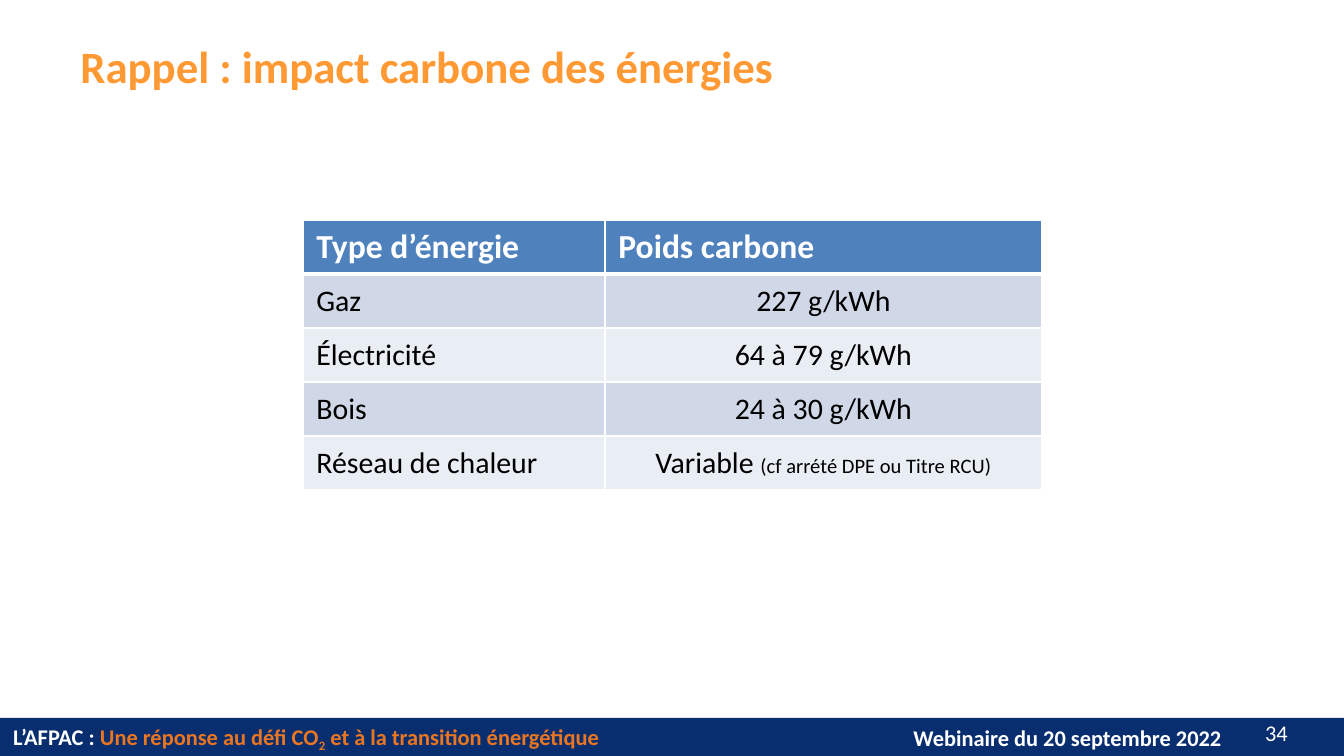
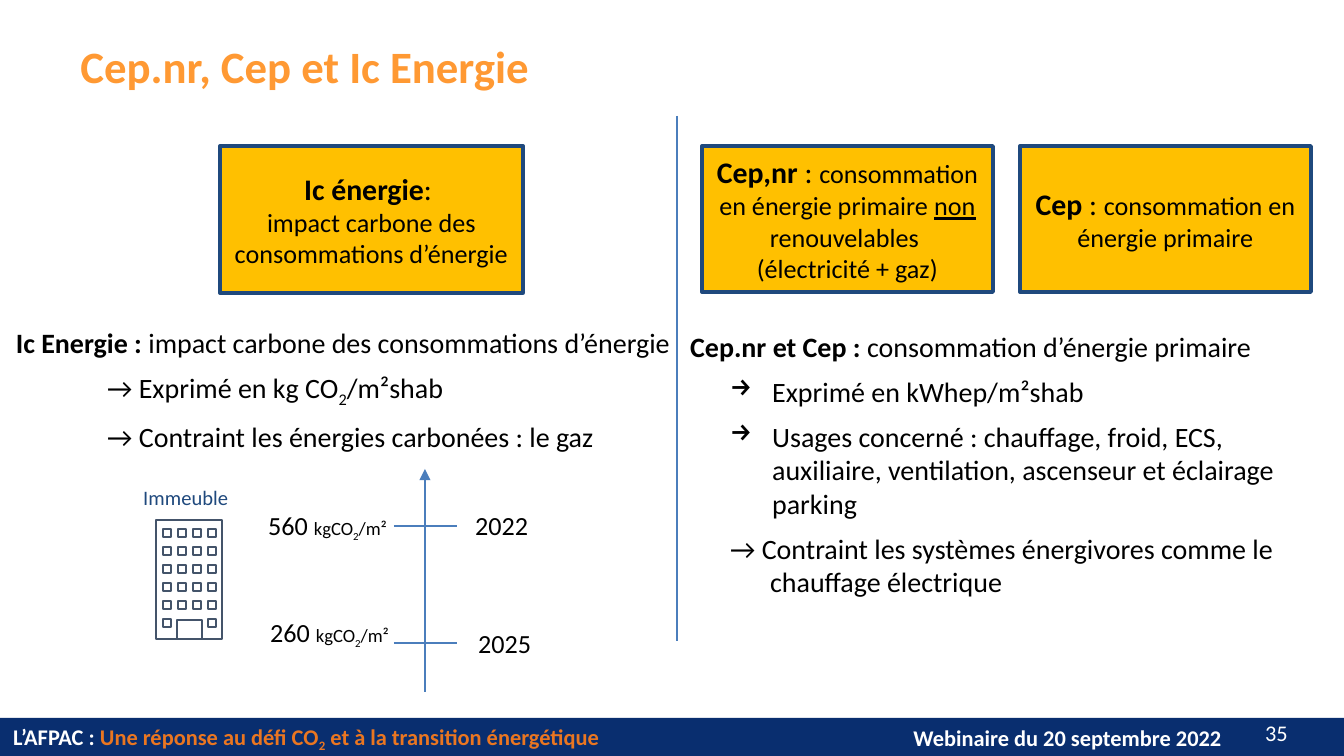
from lxml import etree
from pptx import Presentation
from pptx import util as u
from pptx.dml.color import RGBColor
from pptx.enum import shapes, text
from pptx.oxml import ns

PX = 914400 / 134.4
SLIDE_W, SLIDE_H = 1344, 756
FONT = "Calibri"

WHITE = RGBColor(0xFF, 0xFF, 0xFF)
BLACK = RGBColor(0x00, 0x00, 0x00)
NAVY = RGBColor(0x09, 0x2E, 0x6F)
TITLE_ORANGE = RGBColor(0xFF, 0x99, 0x33)
SLOGAN_ORANGE = RGBColor(0xEA, 0x76, 0x21)
HEADER_BLUE = RGBColor(0x4F, 0x81, 0xBD)
ROW_TINTS = RGBColor(0xD0, 0xD8, 0xE8), RGBColor(0xE9, 0xED, 0xF4)
AMBER = RGBColor(0xFF, 0xC0, 0x00)
DARK_BLUE = RGBColor(0x1F, 0x49, 0x7D)
LINE_BLUE = RGBColor(0x4B, 0x7E, 0xBC)
SLATE = RGBColor(0x44, 0x54, 0x6A)

LEFT, CENTER = text.PP_ALIGN.LEFT, text.PP_ALIGN.CENTER
RIGHT, JUSTIFY = text.PP_ALIGN.RIGHT, text.PP_ALIGN.JUSTIFY
TOP, MIDDLE = text.MSO_ANCHOR.TOP, text.MSO_ANCHOR.MIDDLE

BOLD = {"bold": True}
SUB = {"sub": True}


def px(*lengths):
    return [u.Emu(round(length * PX)) for length in lengths]


def add_runs(paragraph, runs, size, color=BLACK, bold=False):
    """Each run is a (wording, overrides) pair."""
    for wording, style in runs:
        run = paragraph.add_run()
        run.text = wording
        font = run.font
        font.name = FONT
        font.size = u.Pt(style.get("size", size))
        font.bold = style.get("bold", bold)
        font.color.rgb = style.get("color", color)
        if style.get("underline"):
            font.underline = True
        if style.get("sub"):
            run._r.get_or_add_rPr().set("baseline", "-25000")


def fill_frame(frame, paragraphs, size, color=BLACK, bold=False,
               align=LEFT, anchor=TOP):
    frame.word_wrap = True
    frame.vertical_anchor = anchor
    for i, runs in enumerate(paragraphs):
        paragraph = frame.add_paragraph() if i else frame.paragraphs[0]
        paragraph.alignment = align
        add_runs(paragraph, runs, size, color, bold)
    return frame


def add_text(slide, box, paragraphs, size, **style):
    frame = slide.shapes.add_textbox(*px(*box)).text_frame
    return fill_frame(frame, paragraphs, size, **style)


def add_rect(parent, box, fill, line=None, width=1):
    rect = parent.shapes.add_shape(shapes.MSO_SHAPE.RECTANGLE, *px(*box))
    rect.shadow.inherit = False
    rect.fill.solid()
    rect.fill.fore_color.rgb = fill
    if line is None:
        rect.line.fill.background()
    else:
        rect.line.color.rgb = line
        rect.line.width = u.Pt(width)
    return rect


def add_line(slide, x1, y1, x2, y2, arrow=False):
    line = slide.shapes.add_connector(
        shapes.MSO_CONNECTOR.STRAIGHT, *px(x1, y1, x2, y2))
    line.line.color.rgb = LINE_BLUE
    line.line.width = u.Pt(0.75)
    if arrow:
        etree.SubElement(line.line._get_or_add_ln(), ns.qn("a:tailEnd"),
                         type="triangle")
    etree.SubElement(line.element.spPr, ns.qn("a:effectLst"))


def indent(paragraph, left, hanging=0, bullet=None):
    props = paragraph._p.get_or_add_pPr()
    margin, offset = px(left, -hanging)
    props.set("marL", str(margin))
    props.set("indent", str(offset))
    paragraph.space_before = u.Pt(6)
    if bullet:
        etree.SubElement(props, ns.qn("a:buChar"), char=bullet)


def add_footer(slide, box, page):
    x, y, w, h = box
    add_rect(slide, box, NAVY)
    add_text(slide, (x, y, 700, 40), [[
        ("L’AFPAC :", {"color": WHITE}),
        (" Une réponse au défi CO", {}),
        ("2", SUB),
        (" et à la transition énergétique", {}),
    ]], 12, color=SLOGAN_ORANGE, bold=True, anchor=MIDDLE)
    add_text(slide, (x + w - 569, y, 460, 40),
             [[("Webinaire du 20 septembre 2022", {})]],
             12, color=WHITE, bold=True, align=RIGHT)
    add_text(slide, (x + w - 356, y - 5, 313, 40), [[(str(page), {})]],
             12, color=WHITE, align=RIGHT, anchor=MIDDLE)


def add_titled_slide(prs, heading, page):
    slide = prs.slides.add_slide(prs.slide_layouts[5])
    title = slide.shapes.title
    title.left, title.top, title.width, title.height = px(67, 1, 1210, 126)
    frame = fill_frame(title.text_frame, [[(heading, {})]], 24,
                       color=TITLE_ORANGE, bold=True, anchor=MIDDLE)
    frame.auto_size = text.MSO_AUTO_SIZE.NONE
    frame.paragraphs[0].line_spacing = 1.07
    frame.paragraphs[0].space_after = u.Pt(8)
    add_footer(slide, (0, 718, SLIDE_W, 38), page)
    return slide


def set_borders(cell, bottom):
    props = cell._tc.get_or_add_tcPr()
    widths = {"lnL": 1, "lnR": 1, "lnT": 1, "lnB": bottom}
    for i, (side, width) in enumerate(widths.items()):
        border = etree.Element(ns.qn(f"a:{side}"), w=str(u.Pt(width)))
        solid = etree.SubElement(border, ns.qn("a:solidFill"))
        etree.SubElement(solid, ns.qn("a:srgbClr"), val=str(WHITE))
        props.insert(i, border)


def add_carbon_table(slide, box):
    header = "Type d’énergie", "Poids carbone"
    energies = [
        ("Gaz", "227 g/kWh"),
        ("Électricité", "64 à 79 g/kWh"),
        ("Bois", "24 à 30 g/kWh"),
        ("Réseau de chaleur", "Variable "),
    ]
    rows = [header] + energies
    table = slide.shapes.add_table(len(rows), 2, *px(*box)).table
    for column, width in zip(table.columns, px(302, box[2] - 302)):
        column.width = width
    for r, row in enumerate(rows):
        table.rows[r].height = px(box[3] / len(rows))[0]
        for c, wording in enumerate(row):
            cell = table.cell(r, c)
            cell.fill.solid()
            cell.fill.fore_color.rgb = ROW_TINTS[(r - 1) % 2] if r else HEADER_BLUE
            set_borders(cell, 1 if r else 3)
            cell.vertical_anchor = MIDDLE if r else TOP
            paragraph = cell.text_frame.paragraphs[0]
            paragraph.alignment = CENTER if r and c else LEFT
            add_runs(paragraph, [(wording, {})], 16 if r else 18,
                     BLACK if r else WHITE, bold=not r)
    add_runs(paragraph, [("(cf arrété DPE ou Titre RCU)", {})], 11)


def add_indicator(slide, box, paragraphs):
    card = add_rect(slide, box, AMBER, DARK_BLUE, 2)
    fill_frame(card.text_frame, paragraphs, 14, align=CENTER, anchor=MIDDLE)


def add_indicators(slide, top):
    name, plain = {"size": 16, "bold": True}, {"size": 16}
    add_indicator(slide, (220, top, 303, 147), [
        [("Ic énergie", name), (": ", plain)],
        [("impact carbone des consommations d’énergie", {})],
    ])
    add_indicator(slide, (702, top, 291, 146), [
        [("Cep,nr ", name), (": ", plain),
         ("consommation en énergie primaire ", {}),
         ("non", {"underline": True}), (" renouvelables ", {})],
        [("(électricité + gaz)", {})],
    ])
    add_indicator(slide, (1020, top, 291, 146), [
        [("Cep", name), (" : ", plain),
         ("consommation en énergie primaire", {})],
    ])


def add_carbon_notes(slide, box):
    frame = add_text(slide, box, [
        [("Ic Energie : ", BOLD),
         ("impact carbone des consommations d’énergie", {})],
        [("→ Exprimé en kg CO", {}), ("2", SUB), ("/m²shab", {})],
        [("→ Contraint les énergies carbonées : le gaz", {})],
    ], 15)
    frame.paragraphs[0].alignment = CENTER
    for note in frame.paragraphs[1:]:
        indent(note, 94)


def add_primary_notes(slide, box):
    frame = add_text(slide, box, [
        [("Cep.nr et Cep : ", BOLD), ("consommation d’énergie primaire", {})],
        [("Exprimé en kWhep/m²shab", {})],
        [("Usages concerné : chauffage, froid, ECS, auxiliaire, ventilation, "
          "ascenseur et éclairage parking", {})],
        [("→ Contraint les systèmes énergivores comme le chauffage "
          "électrique", {})],
    ], 15)
    _, unit, uses, constraint = frame.paragraphs
    indent(unit, 82, 42, "→")
    indent(uses, 82, 42, "→")
    indent(constraint, 80, 40)


def add_building(slide, box):
    x, y, w, h = box
    building = slide.shapes.add_group_shape()
    add_rect(building, box, WHITE, SLATE)
    columns, floors = 4, 6
    for floor in range(floors):
        for column in range(columns):
            if floor == floors - 1 and column in (1, 2):
                continue
            window = x + 7 + 15 * column, y + 9 + 18 * floor, 8, 8
            add_rect(building, window, WHITE, SLATE)
    add_rect(building, (x + 21, y + h - 19, 25, 19), WHITE, SLATE)


def add_threshold_axis(slide, box):
    x, y, w, h = box
    center = x + w // 2
    add_line(slide, center, y + h, center, y, arrow=True)
    thresholds = [
        ("560 ", "2022", 57, (-139, 34), (68, 34)),
        ("260 ", "2025", 174, (-137, 141), (71, 152)),
    ]
    for amount, year, tick, (amount_x, amount_y), (year_x, year_y) in thresholds:
        add_line(slide, x, y + tick, x + w, y + tick)
        add_text(slide, (x + amount_x, y + amount_y, 160, 46), [[
            (amount, {"size": 14}), ("kgCO", {}), ("2", SUB), ("/m²", {}),
        ]], 10)
        add_text(slide, (x + year_x, y + year_y, 90, 46), [[(year, {})]], 14)


def build_carbon_slide(prs):
    slide = add_titled_slide(prs, "Rappel : impact carbone des énergies", 34)
    add_carbon_table(slide, (303, 220, 739, 270))


def build_indicator_slide(prs):
    slide = add_titled_slide(prs, "Cep.nr, Cep et Ic Energie", 35)
    add_indicators(slide, 146)
    add_primary_notes(slide, (677, 323, 625, 285))
    add_carbon_notes(slide, (0, 319, 686, 138))
    add_threshold_axis(slide, (394, 469, 63, 223))
    add_building(slide, (156, 520, 66, 119))
    add_text(slide, (130, 478, 163, 39), [[("Immeuble", {})]], 11,
             color=DARK_BLUE, align=JUSTIFY)
    add_line(slide, 677, 116, 677, 641)


def main():
    prs = Presentation()
    prs.slide_width, prs.slide_height = px(SLIDE_W, SLIDE_H)
    build_carbon_slide(prs)
    build_indicator_slide(prs)
    prs.save("out.pptx")


if __name__ == "__main__":
    main()
